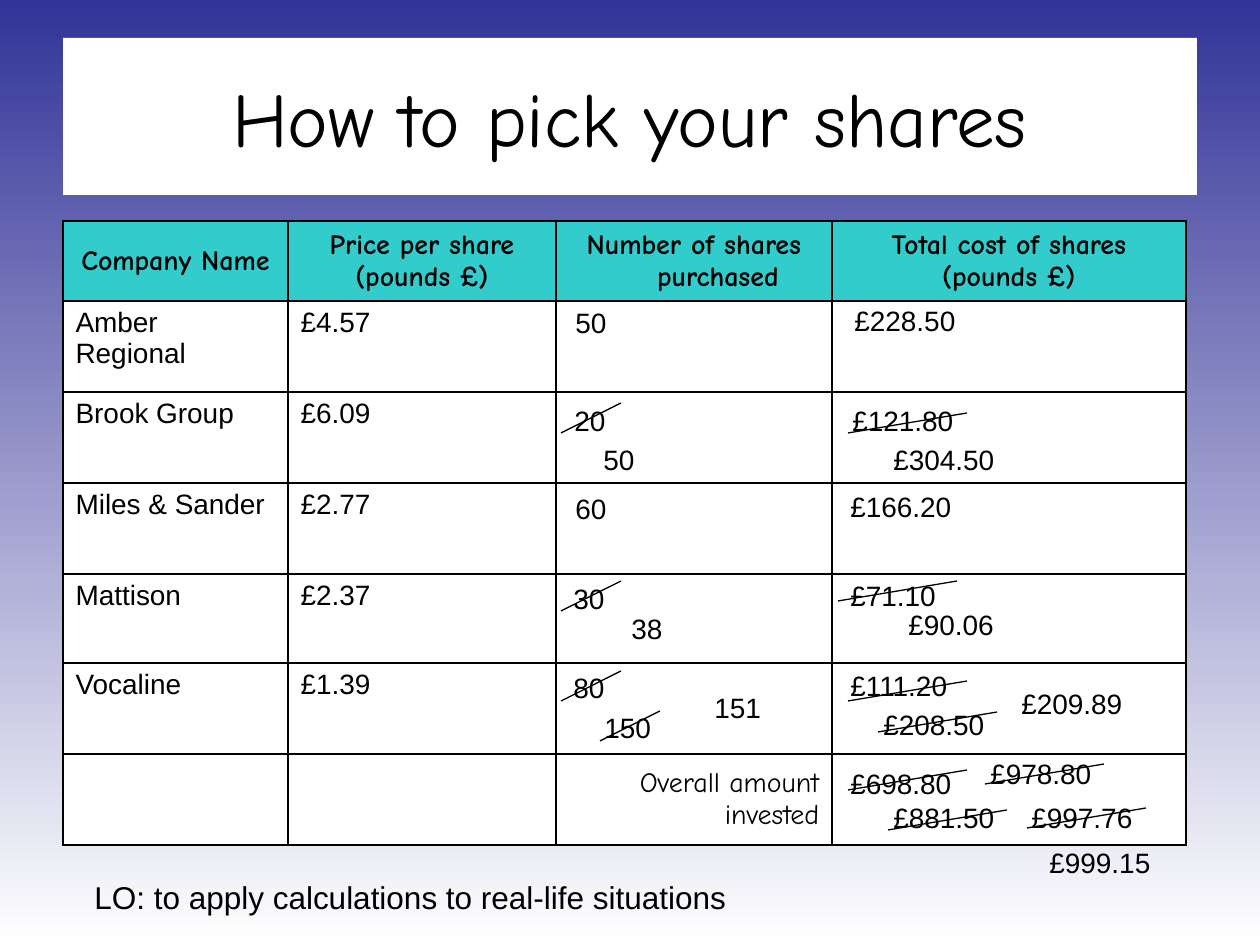
from lxml.etree import SubElement
from pptx import Presentation
from pptx.dml.color import RGBColor
from pptx.enum.shapes import MSO_CONNECTOR
from pptx.enum.text import MSO_ANCHOR, MSO_AUTO_SIZE, PP_ALIGN
from pptx.oxml.ns import qn
from pptx.util import Pt

SCALE = 914400 / 126
BLACK = RGBColor(0, 0, 0)
WHITE = RGBColor(255, 255, 255)
TEAL = RGBColor(0x33, 0xCC, 0xCC)
BLUE = RGBColor(0x33, 0x33, 0x99)
SANS = "Arial"
COMIC = "Comic Neue"

TITLE = "How to pick your shares"
AIM = "LO: to apply calculations to real-life situations"
HEADS = ["Company Name", "Price per share\n(pounds £)",
         "Number of shares purchased", "Total cost of shares\n(pounds £)"]
SHARES = [("Amber Regional", "£4.57"), ("Brook Group", "£6.09"),
          ("Miles & Sander", "£2.77"), ("Mattison", "£2.37"),
          ("Vocaline", "£1.39")]
TOTAL = "Overall amount invested"
COLS = [225, 268, 276, 354]
ROWS = [80, 91, 91, 91, 89, 91, 91]

KEPT = [
    ("50", 563, 299), ("50", 591, 436), ("60", 563, 485),
    ("38", 619, 605), ("151", 702, 684),
    ("£228.50", 842, 297), ("£304.50", 881, 436), ("£166.20", 838, 483),
    ("£90.06", 896, 601), ("£209.89", 1009, 680), ("£999.15", 1037, 839),
]
STRUCK = [
    ("20", 562, 397, 561, 433), ("30", 561, 575, 561, 611),
    ("80", 561, 664, 561, 701), ("150", 592, 704, 600, 741),
    ("£121.80", 840, 397, 848, 433), ("£71.10", 838, 572, 838, 601),
    ("£111.20", 838, 662, 848, 701), ("£208.50", 871, 701, 878, 732),
    ("£698.80", 838, 760, 848, 790), ("£881.50", 881, 794, 888, 830),
    ("£978.80", 978, 750, 985, 784), ("£997.76", 1019, 794, 1027, 828),
]
WIDTHS = {2: 57, 3: 72, 6: 111, 7: 126}


def px(n):
    return round(n * SCALE)


def write(frame, text, size, face, align=PP_ALIGN.LEFT, bold=False, hang=0):
    frame.text = text
    for para in frame.paragraphs:
        para.alignment = align
        if hang:
            props = para._p.get_or_add_pPr()
            props.set("marL", str(px(hang)))
            props.set("indent", str(px(-hang)))
        font = para.font
        font.size, font.name, font.bold = Pt(size), face, bold
        font.color.rgb = BLACK


def label(slide, text, x, y, w, h, size):
    box = slide.shapes.add_textbox(px(x), px(y), px(w), px(h))
    frame = box.text_frame
    frame.word_wrap = False
    frame.auto_size = MSO_AUTO_SIZE.SHAPE_TO_FIT_TEXT
    write(frame, text, size, SANS)


def strike(slide, x, y, w, h):
    line = slide.shapes.add_connector(
        MSO_CONNECTOR.STRAIGHT, px(x), px(y), px(x + w), px(y - h))
    line.line.color.rgb = BLACK
    line.line.width = Pt(0.75)
    SubElement(line._element.spPr, qn("a:effectLst"))


def border(cell):
    props = cell._tc.get_or_add_tcPr()
    for n, side in enumerate(("lnL", "lnR", "lnT", "lnB")):
        edge = props.makeelement(qn("a:" + side), {"w": str(Pt(1))})
        fill = SubElement(edge, qn("a:solidFill"))
        SubElement(fill, qn("a:srgbClr"), val=str(BLACK))
        props.insert(n, edge)


def grid(slide):
    table = slide.shapes.add_table(
        len(ROWS), len(COLS), px(63), px(221),
        px(sum(COLS)), px(sum(ROWS))).table
    for col, w in zip(table.columns, COLS):
        col.width = px(w)
    for row, h in zip(table.rows, ROWS):
        row.height = px(h)
    data = [HEADS, *SHARES, ("", "", TOTAL)]
    for r, texts in enumerate(data):
        for c in range(len(COLS)):
            cell = table.cell(r, c)
            cell.fill.solid()
            cell.fill.fore_color.rgb = WHITE if r else TEAL
            border(cell)
            text = texts[c] if c < len(texts) else ""
            if not text:
                continue
            frame = cell.text_frame
            if r == 0:
                write(frame, text, 16, COMIC, PP_ALIGN.CENTER, True, 48)
            elif text == TOTAL:
                write(frame, text, 16, COMIC, PP_ALIGN.RIGHT, hang=48)
            else:
                write(frame, text, 16, SANS)
                continue
            cell.vertical_anchor = MSO_ANCHOR.MIDDLE


def main():
    deck = Presentation()
    deck.slide_width, deck.slide_height = px(1260), px(945)
    slide = deck.slides.add_slide(deck.slide_layouts[5])
    back = slide.background.fill
    back.gradient()
    back.gradient_angle = 270
    for stop, color, spot in zip(back.gradient_stops, (BLUE, WHITE), (0, 1)):
        stop.color.rgb = color
        stop.position = spot

    title = slide.shapes.title
    title.left, title.top = px(63), px(38)
    title.width, title.height = px(1134), px(157)
    title.fill.solid()
    title.fill.fore_color.rgb = WHITE
    title.text_frame.vertical_anchor = MSO_ANCHOR.MIDDLE
    write(title.text_frame, TITLE, 44, COMIC, PP_ALIGN.CENTER)

    grid(slide)
    label(slide, AIM, 82, 872, 658, 50, 18)
    for text, x, y, *start in KEPT + STRUCK:
        label(slide, text, x, y, WIDTHS[len(text)], 47, 16)
        if start:
            size = (119, 20) if text.startswith("£") else (60, 30)
            strike(slide, *start, *size)
    deck.save("out.pptx")


if __name__ == "__main__":
    main()
